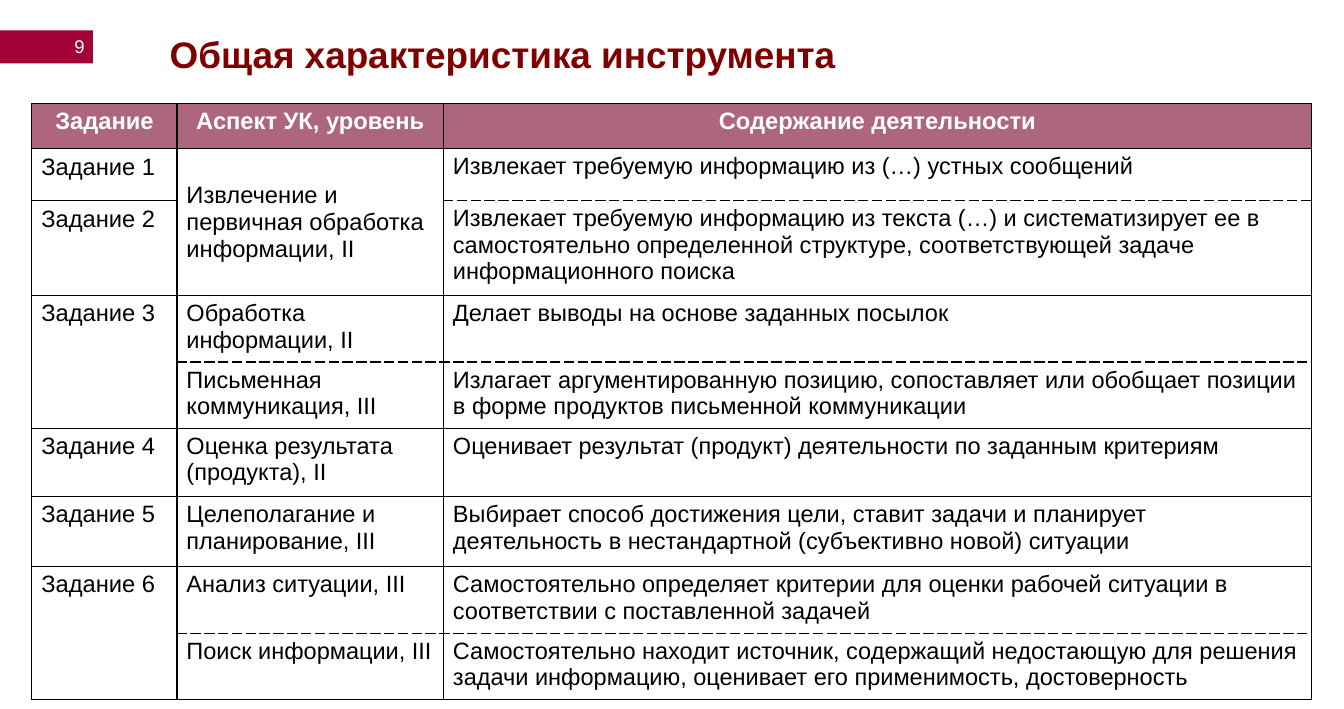
from lxml.etree import SubElement
from pptx import Presentation
from pptx.dml.color import RGBColor
from pptx.enum.shapes import MSO_SHAPE
from pptx.enum.text import MSO_ANCHOR, PP_ALIGN
from pptx.oxml import parse_xml
from pptx.oxml.ns import nsdecls, qn
from pptx.util import Inches, Pt

COLORS = {"tab": "A30236", "title": "800000", "header": "770125",
          "text": "000000", "light": "FFFFFF", "border": "000000"}
FORMATS = {
    "number": {"size": Pt(14), "bold": False},
    "title": {"size": Pt(28), "bold": True},
    "header": {"size": Pt(18), "bold": True},
    "task": {"size": Pt(18), "bold": False},
    "body": {"size": Pt(17.9), "bold": False},
}

# Table content: None continues the cell above
HEADER = ["Задание", "Аспект УК, уровень", "Содержание деятельности"]
TASKS = [
    ["Задание 1", "Извлечение и первичная обработка информации, II",
     "Извлекает требуемую информацию из (…) устных сообщений"],
    ["Задание 2", None,
     "Извлекает требуемую информацию из текста (…) и систематизирует ее в самостоятельно "
     "определенной структуре, соответствующей задаче информационного поиска"],
    ["Задание 3", "Обработка информации, II", "Делает выводы на основе заданных посылок"],
    [None, "Письменная коммуникация, III",
     "Излагает аргументированную позицию, сопоставляет или обобщает позиции в форме "
     "продуктов письменной коммуникации"],
    ["Задание 4", "Оценка результата (продукта), II",
     "Оценивает результат (продукт) деятельности по заданным критериям"],
    ["Задание 5", "Целеполагание и планирование, III",
     "Выбирает способ достижения цели, ставит задачи и планирует деятельность в "
     "нестандартной (субъективно новой) ситуации"],
    ["Задание 6", "Анализ ситуации, III",
     "Самостоятельно определяет критерии для оценки рабочей ситуации в соответствии "
     "с поставленной задачей"],
    [None, "Поиск информации, III",
     "Самостоятельно находит источник, содержащий недостающую для решения задачи "
     "информацию, оценивает его применимость, достоверность"],
]
# Sizes in percent of the slide
COL_SHARES = [10.8, 19.83, 64.57]
ROW_SHARES = [6.42, 7.35, 13.37, 9.36, 9.36, 9.63, 9.89, 9.36, 9.36]


class SlideBuilder:
    """Holds the presentation style and the current slide."""

    def __init__(self, width, height):
        self.prs = Presentation()
        self.prs.slide_width, self.prs.slide_height = Inches(width), Inches(height)
        self.s = self.prs.slides.add_slide(self.prs.slide_layouts[6])

    def x(self, share):
        return round(self.prs.slide_width * share / 100)

    def y(self, share):
        return round(self.prs.slide_height * share / 100)

    def box(self, left, top, width, height):
        return self.x(left), self.y(top), self.x(width), self.y(height)

    def fill_text(self, tf, text, style, color, align=PP_ALIGN.LEFT):
        p = tf.paragraphs[0]
        p.alignment = align
        r = p.add_run()
        r.text = text
        for name, value in {"name": "Arial", **FORMATS[style]}.items():
            setattr(r.font, name, value)
        r.font.color.rgb = RGBColor.from_string(COLORS[color])

    def rect(self, area, color):
        sp = self.s.shapes.add_shape(MSO_SHAPE.RECTANGLE, *self.box(*area))
        sp.shadow.inherit = False
        sp.fill.solid()
        sp.fill.fore_color.rgb = RGBColor.from_string(COLORS[color])
        sp.line.fill.background()

    def text(self, area, text, style, color, align=PP_ALIGN.LEFT, anchor=MSO_ANCHOR.TOP):
        tf = self.s.shapes.add_textbox(*self.box(*area)).text_frame
        tf.word_wrap = True
        tf.vertical_anchor = anchor
        self.fill_text(tf, text, style, color, align)

    def borders(self, cell, dashed):
        tc_pr = cell._tc.get_or_add_tcPr()
        for i, side in enumerate("LRTB"):
            dash = "dash" if side in dashed else "solid"
            tc_pr.insert(i, parse_xml(
                f'<a:ln{side} {nsdecls("a")} w="{int(Pt(1))}"><a:solidFill>'
                f'<a:srgbClr val="{COLORS["border"]}"/></a:solidFill>'
                f'<a:prstDash val="{dash}"/></a:ln{side}>'))

    def header_fill(self, cell):
        cell.fill.solid()
        cell.fill.fore_color.rgb = RGBColor.from_string(COLORS["header"])
        color = cell._tc.tcPr.find(qn("a:solidFill")).find(qn("a:srgbClr"))
        SubElement(color, qn("a:alpha")).set("val", "60000")

    def table(self, left, top, rows, col_shares, row_shares):
        area = self.box(left, top, sum(col_shares), sum(row_shares))
        table = self.s.shapes.add_table(len(rows), len(col_shares), *area).table
        table.first_row = table.horz_banding = False
        for col, share in zip(table.columns, col_shares):
            col.width = self.x(share)
        for row, share in zip(table.rows, row_shares):
            row.height = self.y(share)

        # A dashed line parts two rows that share a task or an aspect
        def parted(i, j):
            return 0 < i < len(rows) and j > 0 and None in rows[i]

        for i, row in enumerate(rows):
            for j, text in enumerate(row):
                cell = table.cell(i, j)
                spans = i + 1 < len(rows) and rows[i + 1][j] is None
                if i == 0:
                    self.header_fill(cell)
                    self.fill_text(cell.text_frame, text, "header", "light", PP_ALIGN.CENTER)
                else:
                    cell.fill.background()
                if i and text:
                    style = "task" if j == 0 or spans else "body"
                    self.fill_text(cell.text_frame, text, style, "text")
                merged = spans or text is None
                dashed = "" if merged else "T" * parted(i, j) + "B" * parted(i + 1, j)
                self.borders(cell, dashed)
                if spans:
                    cell.merge(table.cell(i + 1, j))
                    cell.vertical_anchor = MSO_ANCHOR.MIDDLE if j else MSO_ANCHOR.TOP


def main():
    b = SlideBuilder(14.17, 7.48)

    # Page number tab
    b.rect((0, 4.28, 6.92, 4.68), "tab")
    b.text((1.27, 3.88, 5.72, 5.35), "9", "number", "light", PP_ALIGN.RIGHT, MSO_ANCHOR.MIDDLE)

    # Title
    b.text((11.93, 3.74, 63.59, 7.62), "Общая характеристика инструмента", "title", "title")

    # Tasks table
    b.table(2.37, 14.57, [HEADER] + TASKS, COL_SHARES, ROW_SHARES)

    b.prs.save("out.pptx")


if __name__ == "__main__":
    main()
